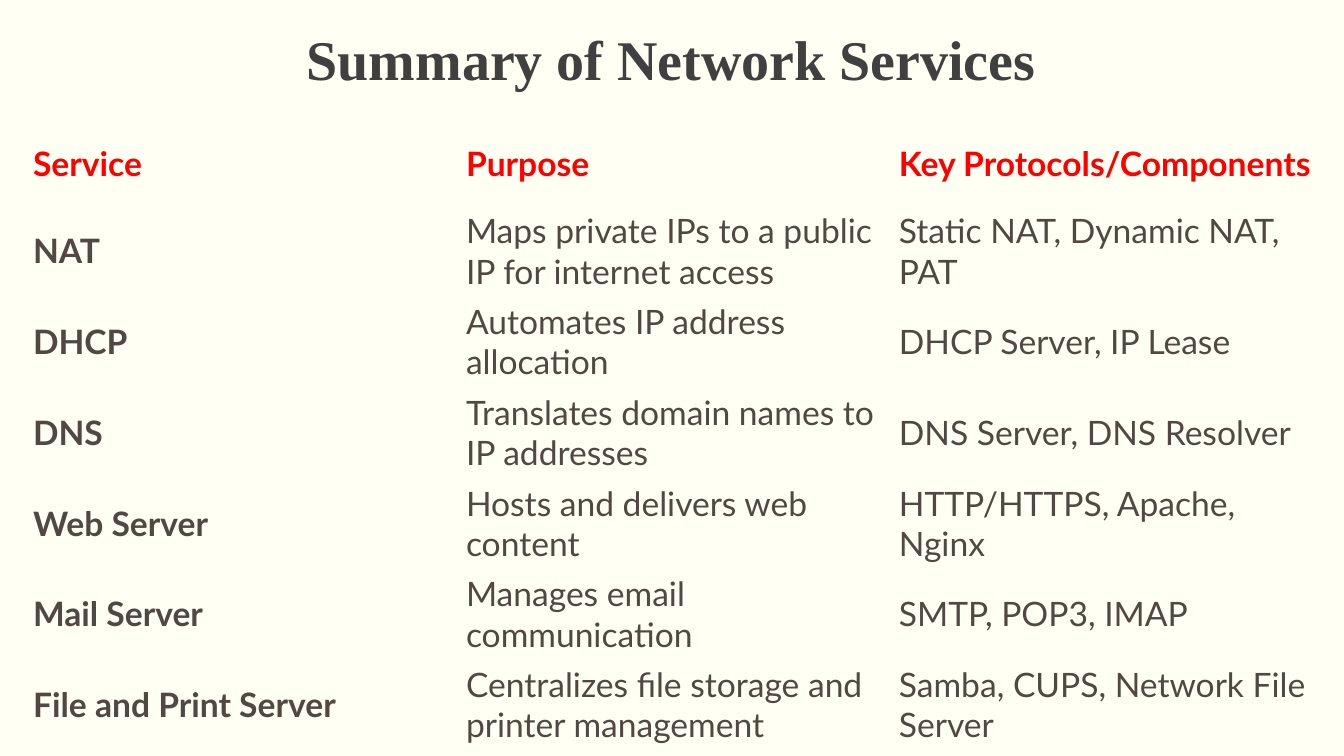
from pptx import Presentation
from pptx.dml.color import RGBColor
from pptx.enum import text
from pptx.oxml.ns import qn
from pptx.util import Cm, Pt

TITLE = "Summary of Network Services"
HEADER = ("Service", "Purpose", "Key Protocols/Components")
SERVICES = [
    ("NAT", "Maps private IPs to a public IP for internet access", "Static NAT, Dynamic NAT, PAT"),
    ("DHCP", "Automates IP address allocation", "DHCP Server, IP Lease"),
    ("DNS", "Translates domain names to IP addresses", "DNS Server, DNS Resolver"),
    ("Web Server", "Hosts and delivers web content", "HTTP/HTTPS, Apache, Nginx"),
    ("Mail Server", "Manages email communication", "SMTP, POP3, IMAP"),
    ("File and Print Server", "Centralizes file storage and printer management",
     "Samba, CUPS, Network File Server"),
]
BACKGROUND, TITLE_GREY, HEADER_RED, BODY_BROWN = "FFFFF3", "404040", "FF0000", "514843"
NO_STYLE_NO_GRID = "{2D5ABB26-0587-4C30-8999-92F81FD0307C}"
COL_WIDTH, ROW_HEIGHT = Cm(10.91), Cm(2.13)


def rgb(value):
    return RGBColor.from_string(value)


def format_runs(p, font, size, color, bold):
    for r in p.runs:
        r.font.name = font
        r.font.size = Pt(size)
        r.font.bold = bold
        r.font.color.rgb = rgb(color)


def add_title(s):
    sp = s.shapes.title
    sp.left, sp.top, sp.width, sp.height = Cm(1.52), Cm(0.48), Cm(30.78), Cm(1.96)
    tf = sp.text_frame
    tf.text = TITLE
    tf.word_wrap = True
    tf.auto_size = text.MSO_AUTO_SIZE.SHAPE_TO_FIT_TEXT
    tf.vertical_anchor = text.MSO_ANCHOR.MIDDLE
    p = tf.paragraphs[0]
    p.alignment = text.PP_ALIGN.CENTER
    format_runs(p, "Times New Roman", 40, TITLE_GREY, True)


def add_services_table(s):
    rows = [HEADER, *SERVICES]
    frame = s.shapes.add_table(len(rows), len(HEADER), Cm(0.58), Cm(3.05),
                               COL_WIDTH * len(HEADER), ROW_HEIGHT * len(rows))
    table = frame.table
    table.horz_banding = False
    table._tbl.tblPr.find(qn("a:tableStyleId")).text = NO_STYLE_NO_GRID
    for column in table.columns:
        column.width = COL_WIDTH
    for i, row in enumerate(rows):
        table.rows[i].height = ROW_HEIGHT
        for j, words in enumerate(row):
            cell = table.cell(i, j)
            cell.fill.background()
            cell.vertical_anchor = text.MSO_ANCHOR.MIDDLE
            cell.text_frame.text = words
            format_runs(cell.text_frame.paragraphs[0], "Lato", 24,
                        HEADER_RED if i == 0 else BODY_BROWN, i == 0 or j == 0)


def main():
    prs = Presentation()
    prs.slide_width, prs.slide_height = Cm(33.87), Cm(19.05)
    s = prs.slides.add_slide(prs.slide_layouts[5])
    s.background.fill.solid()
    s.background.fill.fore_color.rgb = rgb(BACKGROUND)
    add_services_table(s)
    add_title(s)
    prs.save("out.pptx")


if __name__ == "__main__":
    main()
